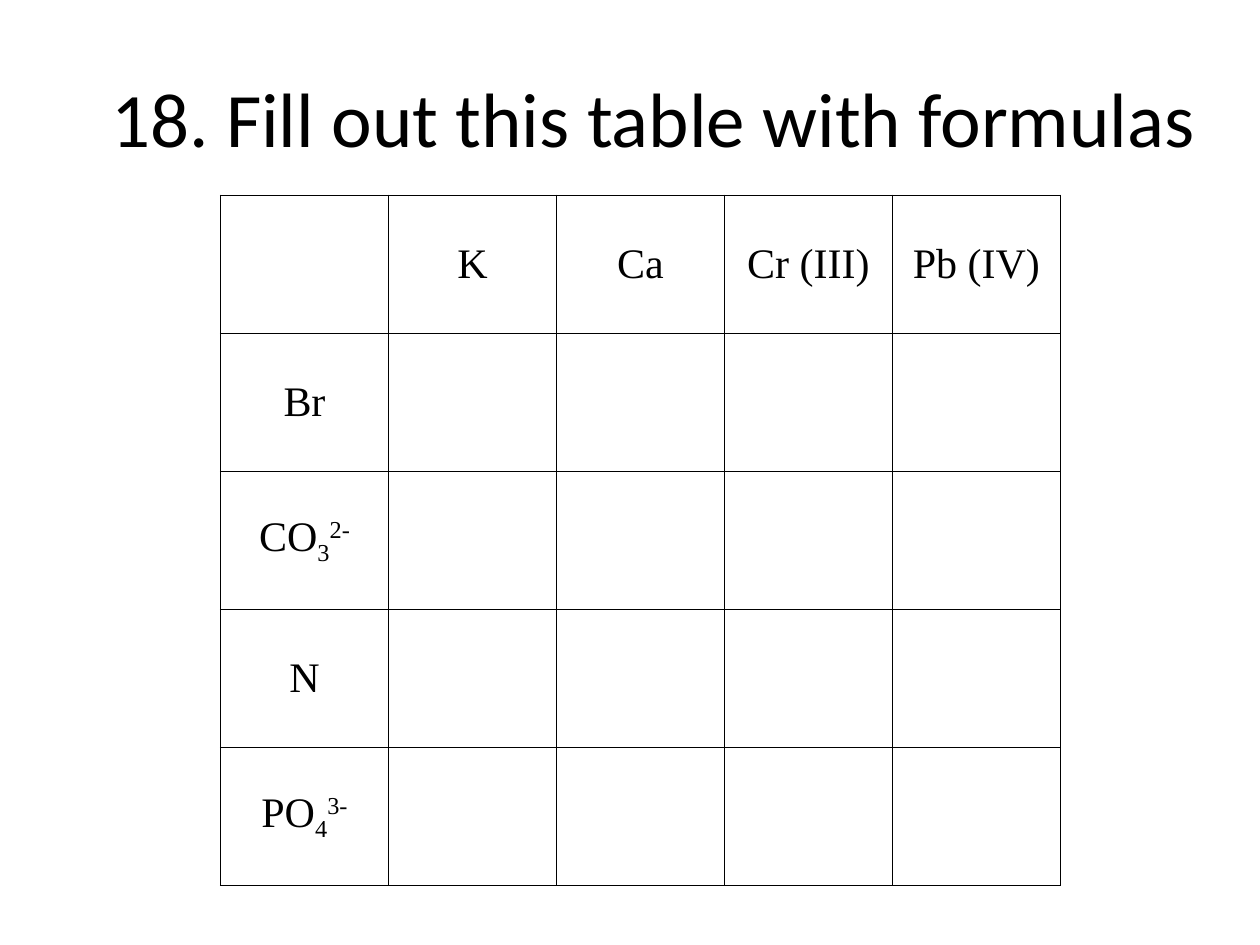
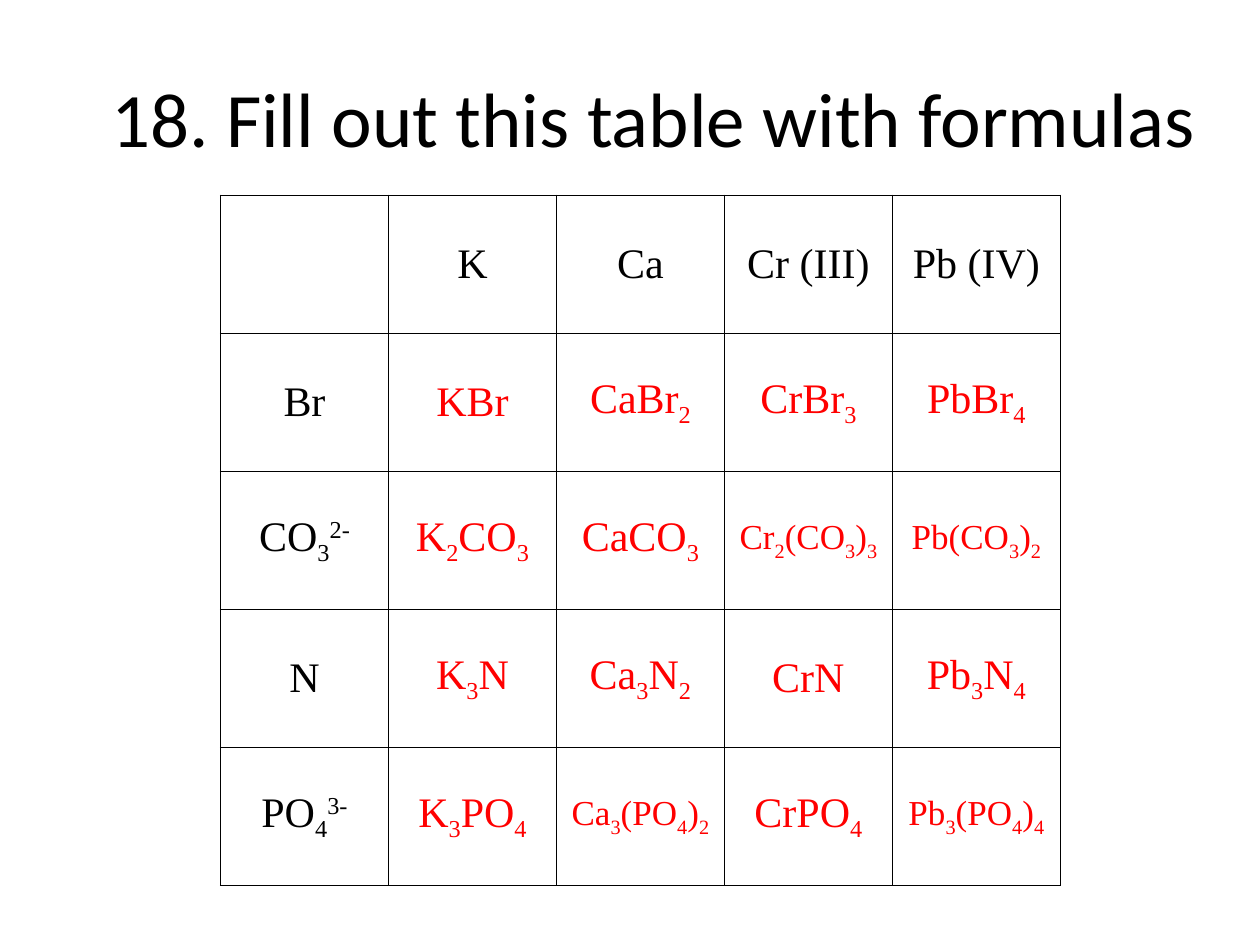
from itertools import groupby

from lxml import etree
from pptx import Presentation
from pptx.dml.color import RGBColor
from pptx.enum.text import MSO_ANCHOR, PP_ALIGN
from pptx.oxml.ns import qn
from pptx.util import Pt

CENTER = PP_ALIGN.CENTER
MIDDLE = MSO_ANCHOR.MIDDLE
TITLE_ONLY = 5
BLACK, RED, WHITE = "000000", "FF0000", "FFFFFF"
SUBSCRIPT, SUPERSCRIPT = "-25000", "30000"

TITLE = "18. Fill out this table with formulas"
CATIONS = ["K", "Ca", "Cr (III)", "Pb (IV)"]
ANIONS = ["Br", "CO3^2-", "N", "PO4^3-"]
ANSWERS = [
    ["KBr", "CaBr2", "CrBr3", "PbBr4"],
    ["K2CO3", "CaCO3", "Cr2(CO3)3", "Pb(CO3)2"],
    ["K3N", "Ca3N2", "CrN", "Pb3N4"],
    ["K3PO4", "Ca3(PO4)2", "CrPO4", "Pb3(PO4)4"],
]
BLANKS = [[""] * len(CATIONS) for _ in ANIONS]


def rgb(hex_string):
    """Turn a hex string into a colour."""
    return RGBColor.from_string(hex_string)


def formula_parts(formula):
    """Split a formula into (text, baseline) pairs; ^ starts the charge."""
    body, _, charge = formula.partition("^")
    parts = [("".join(letters), SUBSCRIPT if is_digit else None)
             for is_digit, letters in groupby(body, str.isdigit)]
    return parts + ([(charge, SUPERSCRIPT)] if charge else [])


class Worksheet:
    """Style of the worksheet and the slide being built."""

    title_format = {"name": "Calibri", "size": Pt(44), "bold": False}
    cell_format = {"name": "Times New Roman", "size": Pt(24), "bold": False}
    long_answer_size = Pt(20)
    column_width, row_height = Pt(96), Pt(78.9)

    def __init__(self):
        """Start an empty 4:3 presentation."""
        self.deck = Presentation()
        self.deck.slide_width, self.deck.slide_height = Pt(720), Pt(540)
        self.slide = None

    def add_slide(self):
        """Add a slide with a plain white background."""
        layout = self.deck.slide_layouts[TITLE_ONLY]
        self.slide = self.deck.slides.add_slide(layout)
        background = self.slide.background.fill
        background.solid()
        background.fore_color.rgb = rgb(WHITE)

    def add_run(self, paragraph, text, format_values, color):
        """Append a formatted run to a paragraph."""
        run = paragraph.add_run()
        run.text = text
        for attribute, value in format_values.items():
            setattr(run.font, attribute, value)
        run.font.color.rgb = rgb(color)
        return run

    def add_title(self, text):
        """Fill and place the title placeholder."""
        heading = self.slide.shapes.title
        place = {"left": Pt(36), "top": Pt(21.6),
                 "width": Pt(675.4), "height": Pt(90)}
        for attribute, value in place.items():
            setattr(heading, attribute, value)
        heading.text_frame.vertical_anchor = MIDDLE
        paragraph = heading.text_frame.paragraphs[0]
        paragraph.alignment = CENTER
        self.add_run(paragraph, text, self.title_format, BLACK)

    def add_borders(self, cell):
        """Draw a thin black line on each side of a cell."""
        properties = cell._tc.get_or_add_tcPr()
        for position, side in enumerate(("lnL", "lnR", "lnT", "lnB")):
            line = etree.Element(qn(f"a:{side}"), w=str(Pt(1)))
            fill = etree.SubElement(line, qn("a:solidFill"))
            etree.SubElement(fill, qn("a:srgbClr"), val=BLACK)
            properties.insert(position, line)

    def fill_cell(self, cell, formula, is_answer):
        """Style a cell and write its formula."""
        cell.fill.background()
        cell.vertical_anchor = MIDDLE
        self.add_borders(cell)
        format_values = dict(self.cell_format)
        if is_answer and ")" in formula:
            format_values["size"] = self.long_answer_size
        paragraph = cell.text_frame.paragraphs[0]
        paragraph.alignment = CENTER
        for text, baseline in formula_parts(formula):
            run = self.add_run(paragraph, text, format_values,
                               RED if is_answer else BLACK)
            if baseline:
                run.font._element.set("baseline", baseline)

    def add_ion_table(self, compounds):
        """Add the grid of cations against anions."""
        rows = [["", *CATIONS]]
        rows += [[anion, *row] for anion, row in zip(ANIONS, compounds)]
        height, width = len(rows), len(rows[0])
        grid = self.slide.shapes.add_table(
            height, width, Pt(126), Pt(111.6),
            self.column_width * width, self.row_height * height).table
        grid.first_row = grid.horz_banding = False
        for row_number, row in enumerate(rows):
            for column_number, formula in enumerate(row):
                self.fill_cell(grid.cell(row_number, column_number), formula,
                               row_number > 0 and column_number > 0)


def main():
    """Build the exercise and its answer key."""
    worksheet = Worksheet()
    for compounds in (BLANKS, ANSWERS):
        worksheet.add_slide()
        worksheet.add_title(TITLE)
        worksheet.add_ion_table(compounds)
    worksheet.deck.save("out.pptx")


if __name__ == "__main__":
    main()
